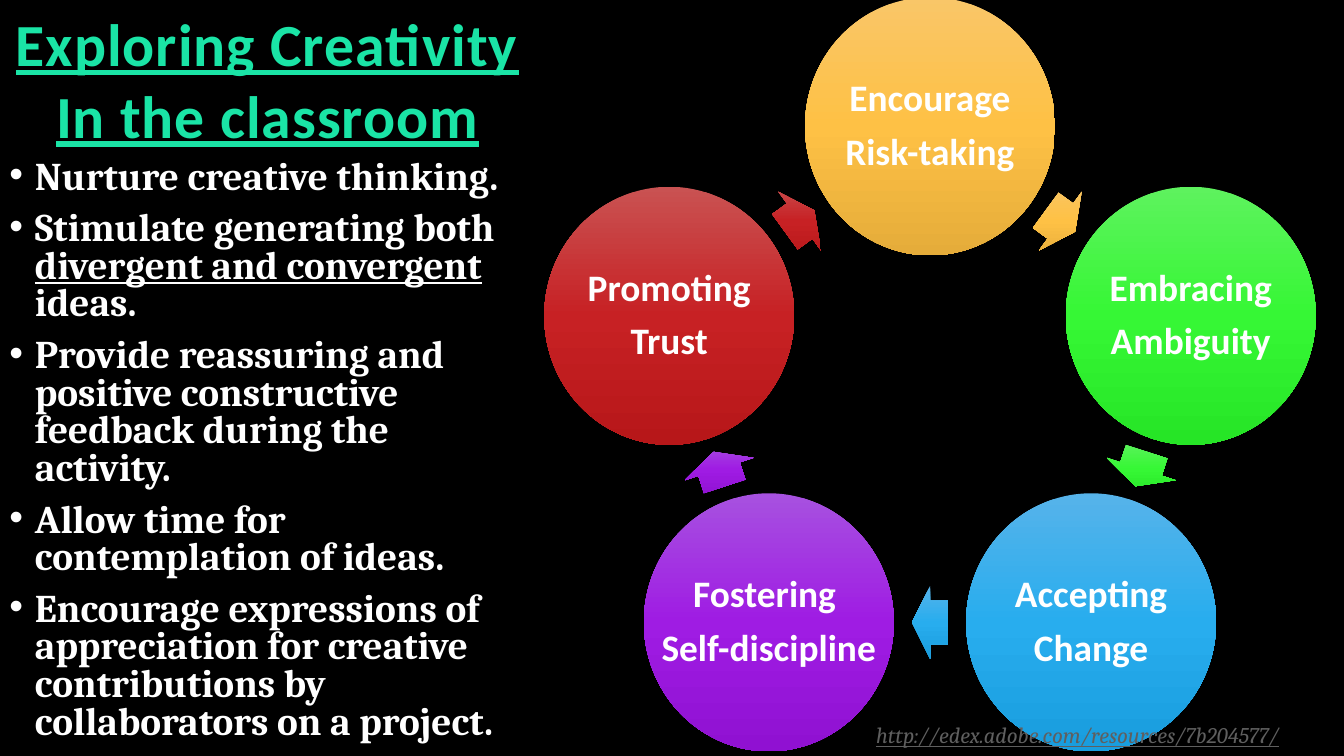
import math

import lxml.etree
import pptx
import pptx.dml.color
import pptx.enum.shapes
import pptx.enum.text
import pptx.oxml.ns
import pptx.util

Inches = pptx.util.Inches
Pt = pptx.util.Pt
RGBColor = pptx.dml.color.RGBColor
MSO_SHAPE = pptx.enum.shapes.MSO_SHAPE
PP_ALIGN = pptx.enum.text.PP_ALIGN
MSO_ANCHOR = pptx.enum.text.MSO_ANCHOR
qn = pptx.oxml.ns.qn

BLACK = RGBColor(0x00, 0x00, 0x00)
WHITE = RGBColor(0xFF, 0xFF, 0xFF)
GRAY = RGBColor(0x5F, 0x5F, 0x5F)
TEAL = RGBColor(0x1A, 0xE4, 0xA6)

# Top, middle and bottom colour of each gradient
AMBER = [RGBColor(0xF9, 0xC6, 0x68), RGBColor(0xFE, 0xC1, 0x45), RGBColor(0xE5, 0xAC, 0x3A)]
GREEN = [RGBColor(0x5E, 0xF2, 0x5E), RGBColor(0x36, 0xF7, 0x35), RGBColor(0x26, 0xE5, 0x26)]
BLUE = [RGBColor(0x56, 0xB3, 0xEA), RGBColor(0x28, 0xAD, 0xEE), RGBColor(0x19, 0x9D, 0xDE)]
PURPLE = [RGBColor(0xA7, 0x51, 0xE0), RGBColor(0x9F, 0x1C, 0xE3), RGBColor(0x90, 0x11, 0xD2)]
RED = [RGBColor(0xC9, 0x52, 0x52), RGBColor(0xC7, 0x21, 0x24), RGBColor(0xB7, 0x17, 0x19)]

STEPS = [
    (["Encourage", "Risk-taking"], AMBER),
    (["Embracing", "Ambiguity"], GREEN),
    (["Accepting", "Change"], BLUE),
    (["Fostering ", "Self-discipline"], PURPLE),
    (["Promoting", "Trust"], RED),
]
# Each bullet is a list of (text, underlined) runs
BULLETS = [
    [("Nurture creative thinking.", False)],
    [("Stimulate generating both ", False), ("divergent and convergent ", True), ("ideas.", False)],
    [("Provide reassuring and positive constructive feedback during the activity.", False)],
    [("Allow time for contemplation of ideas.", False)],
    [("Encourage expressions of appreciation for creative contributions by "
      "collaborators on a project.", False)],
]


class Deck:
    heading_font = "Calibri"
    body_font = "Cambria"

    def __init__(self, prs):
        self.s = prs.slides.add_slide(prs.slide_layouts[5])
        fill = self.s.background.fill
        fill.solid()
        fill.fore_color.rgb = BLACK

    def style(self, r, name, size, color, bold=False):
        r.font.name, r.font.size, r.font.bold = name, Pt(size), bold
        r.font.color.rgb = color

    def title(self, text, x, y, w, h):
        sp = self.s.shapes.title
        sp.left, sp.top, sp.width, sp.height = Inches(x), Inches(y), Inches(w), Inches(h)
        tf = sp.text_frame
        tf.text = text
        tf.auto_size = pptx.enum.text.MSO_AUTO_SIZE.NONE
        tf.vertical_anchor = MSO_ANCHOR.TOP
        p = tf.paragraphs[0]
        p.alignment = PP_ALIGN.CENTER
        r = p.runs[0]
        self.style(r, self.heading_font, 32, TEAL, True)
        r.font.underline = True
        r.font._element.set("spc", "50")

    def shape(self, kind, cx, cy, w, h, colors):
        """Add a borderless shape centred on (cx, cy) with a vertical gradient."""
        sp = self.s.shapes.add_shape(
            kind, Inches(cx - w / 2), Inches(cy - h / 2), Inches(w), Inches(h))
        sp.shadow.inherit = False
        sp.line.fill.background()
        sp.fill.gradient()
        grad = sp.fill._xPr.find(qn("a:gradFill"))
        grad.set("rotWithShape", "0")
        stops = grad.find(qn("a:gsLst"))
        for stop in list(stops):
            stops.remove(stop)
        for i, color in enumerate(colors):
            stop = lxml.etree.SubElement(stops, qn("a:gs"), pos=str(i * 50000))
            lxml.etree.SubElement(stop, qn("a:srgbClr"), val=str(color))
        grad.find(qn("a:lin")).set("ang", "5400000")
        return sp

    def circle(self, cx, cy, lines, colors):
        sp = self.shape(MSO_SHAPE.OVAL, cx, cy, 1.86, 1.92, colors)
        tf = sp.text_frame
        tf.word_wrap = False
        tf.vertical_anchor = MSO_ANCHOR.MIDDLE
        tf.margin_left = tf.margin_right = tf.margin_top = tf.margin_bottom = Inches(0.03)
        tf.text = "\n".join(lines)
        for p in tf.paragraphs:
            p.alignment = PP_ALIGN.CENTER
            p.line_spacing = 0.9
            p.space_after = Pt(7)
            self.style(p.runs[0], self.heading_font, 20, WHITE, True)

    def arrow(self, cx, cy, angle, colors):
        sp = self.shape(MSO_SHAPE.RIGHT_ARROW, cx, cy, 0.27, 0.54, colors)
        sp.adjustments[0], sp.adjustments[1] = 0.6, 0.5
        sp.rotation = angle

    def cycle(self, cx, cy, radius, steps):
        """Place circles clockwise from the top, with arrows midway between them."""
        turn = 360 / len(steps)
        angles = [math.radians(i * turn - 90) for i in range(len(steps))]
        points = [(cx + radius * math.cos(a), cy + radius * math.sin(a)) for a in angles]
        for i, (lines, colors) in enumerate(steps):
            x, y = points[i]
            next_x, next_y = points[(i + 1) % len(points)]
            self.circle(x, y, lines, colors)
            self.arrow((x + next_x) / 2, (y + next_y) / 2, (i + 0.5) * turn, colors)

    def textbox(self, x, y, w, h, wrap):
        tf = self.s.shapes.add_textbox(Inches(x), Inches(y), Inches(w), Inches(h)).text_frame
        tf.word_wrap = wrap
        return tf

    def link(self, text, x, y, w, h):
        tf = self.textbox(x, y, w, h, False)
        tf.text = text
        r = tf.paragraphs[0].runs[0]
        self.style(r, self.body_font, 12, GRAY)
        r.font.italic = r.font.underline = True

    def bullets(self, items, x, y, w, h):
        tf = self.textbox(x, y, w, h, True)
        tf.margin_left = tf.margin_right = Inches(0.07)
        tf.margin_top = tf.margin_bottom = Inches(0.04)
        for i, item in enumerate(items):
            p = tf.add_paragraph() if i else tf.paragraphs[0]
            p.line_spacing = 0.8
            if i:
                p.space_before = Pt(7.5)
            pPr = p._p.get_or_add_pPr()
            pPr.set("marL", str(Inches(0.19)))
            pPr.set("indent", str(Inches(-0.19)))
            lxml.etree.SubElement(pPr, qn("a:buFont"), typeface="Arial")
            lxml.etree.SubElement(pPr, qn("a:buChar"), char="•")
            for text, underlined in item:
                r = p.add_run()
                r.text = text
                self.style(r, self.body_font, 21, WHITE, True)
                r.font.underline = underlined


def main():
    prs = pptx.Presentation()
    prs.slide_width = Inches(10)
    prs.slide_height = prs.slide_width * 9 // 16
    deck = Deck(prs)
    deck.cycle(6.92, 2.98, 2.04, STEPS)
    deck.link("http://edex.adobe.com/resources/7b204577/", 6.42, 5.32, 3.55, 0.3)
    deck.title("Exploring Creativity In the classroom", -0.02, 0, 4.02, 1.18)
    deck.bullets(BULLETS, 0, 1.15, 3.92, 4.49)
    prs.save("out.pptx")


if __name__ == "__main__":
    main()
